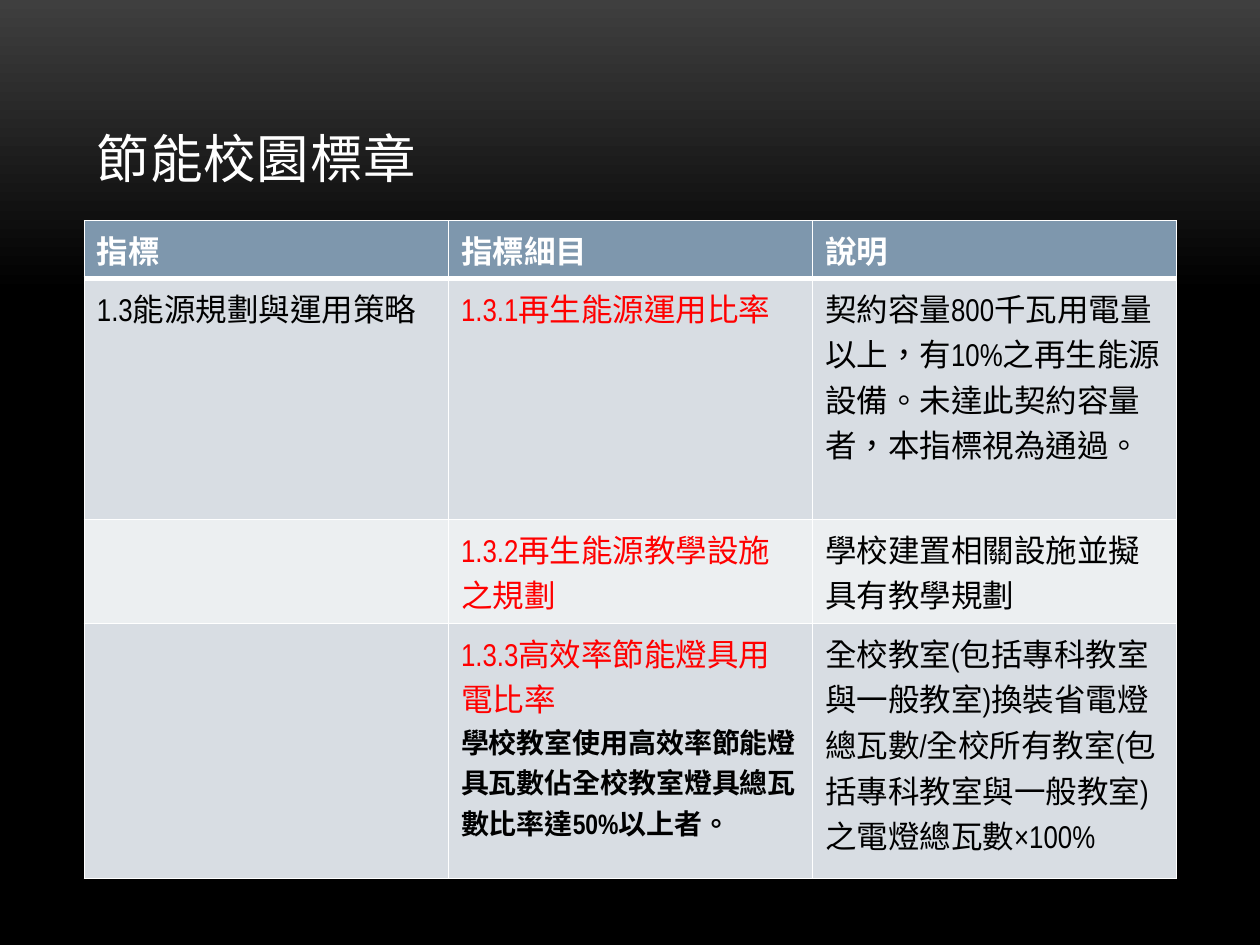
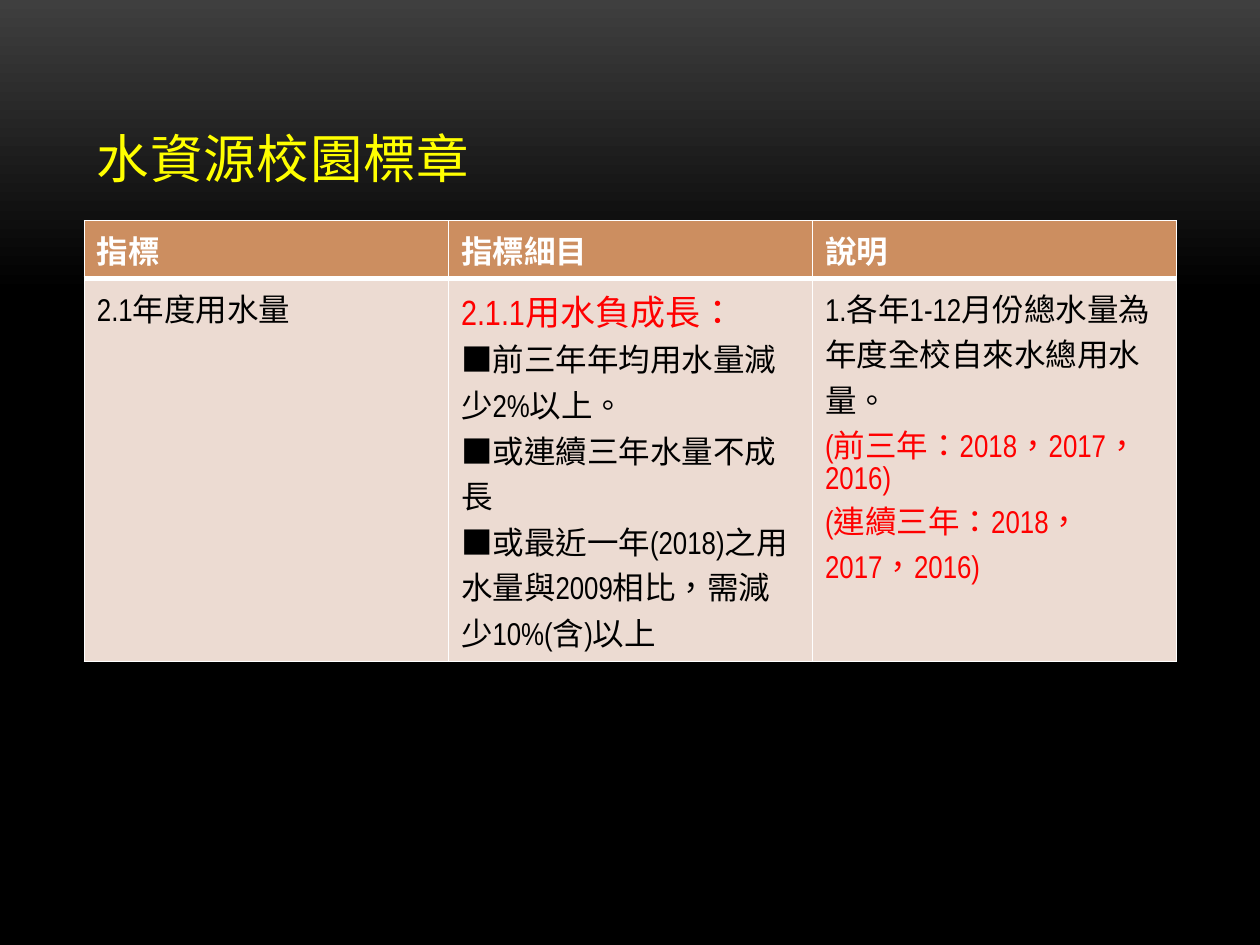
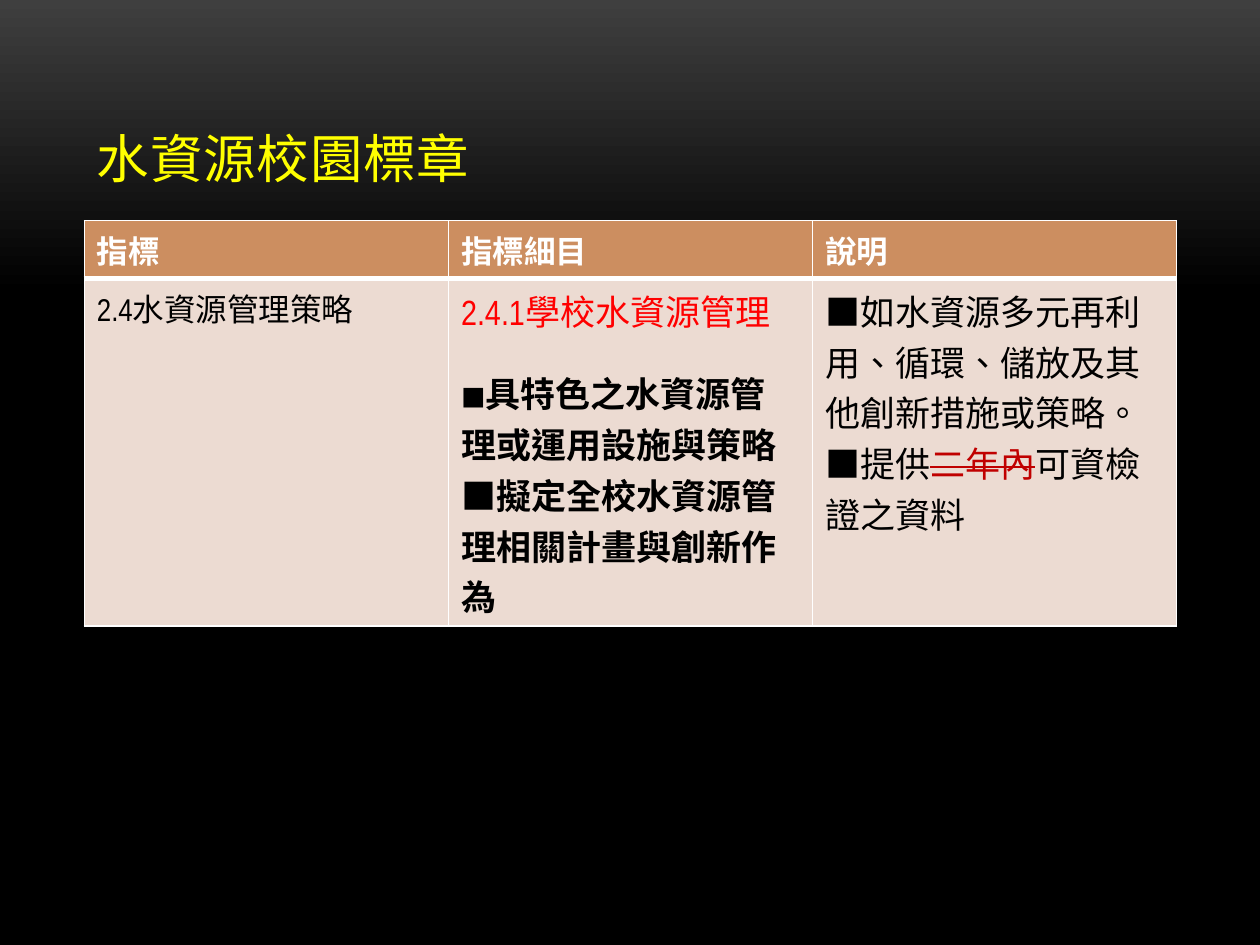
from dataclasses import dataclass

from lxml.etree import SubElement
from pptx import Presentation
from pptx.dml.color import RGBColor
from pptx.enum.lang import MSO_LANGUAGE_ID as Lang
from pptx.enum.text import MSO_ANCHOR as Anchor
from pptx.oxml.ns import qn
from pptx.util import Cm, Pt

WHITE = RGBColor(0xFF, 0xFF, 0xFF)
BLACK = RGBColor(0x00, 0x00, 0x00)
GRAY = RGBColor(0x3F, 0x3F, 0x3F)
RED = RGBColor(0xFF, 0x00, 0x00)
DARK_RED = RGBColor(0xC0, 0x00, 0x00)
YELLOW = RGBColor(0xFF, 0xFF, 0x00)
BLUE = RGBColor(0x7E, 0x97, 0xAD)
BLUE_MID = RGBColor(0xD8, 0xDD, 0xE3)
BLUE_PALE = RGBColor(0xEC, 0xEF, 0xF1)
ORANGE = RGBColor(0xCC, 0x8E, 0x60)
ORANGE_PALE = RGBColor(0xEC, 0xDB, 0xD2)

FONT = "Arial Narrow"
LEFT, WIDTH = Cm(1.7), Cm(22.02)
HEADS = ("指標", "指標細目", "說明")
HEAD_HIGH = 1.16


@dataclass(frozen=True)
class Span:
    text: str
    size: int | None = None
    color: RGBColor | None = None
    strike: bool = False


@dataclass(frozen=True)
class Para:
    spans: str | tuple[Span, ...]
    size: int = 18
    color: RGBColor = BLACK
    bold: bool = False
    before: int = 0


@dataclass(frozen=True)
class Row:
    high: float
    cells: tuple[tuple[Para, ...], ...]


@dataclass(frozen=True)
class Theme:
    title: RGBColor
    head: RGBColor
    bands: tuple[RGBColor, ...]


@dataclass(frozen=True)
class Page:
    title: str
    theme: Theme
    rows: tuple[Row, ...]


ENERGY = Theme(WHITE, BLUE, (BLUE_MID, BLUE_PALE))
WATER = Theme(YELLOW, ORANGE, (ORANGE_PALE,))

PAGES = (
    Page("節能校園標章", ENERGY, (
        Row(4.86, (
            (Para("1.3能源規劃與運用策略"),),
            (Para("1.3.1再生能源運用比率", color=RED),),
            (Para("契約容量800千瓦用電量以上，有10%之再生能源設備。"
                  "未達此契約容量者，本指標視為通過。"),),
        )),
        Row(2.1, (
            (),
            (Para("1.3.2再生能源教學設施之規劃", color=RED),),
            (Para("學校建置相關設施並擬具有教學規劃"),),
        )),
        Row(5.14, (
            (),
            (Para("1.3.3高效率節能燈具用電比率", color=RED),
             Para("學校教室使用高效率節能燈具瓦數佔全校教室燈具總瓦數比率達50%以上者。",
                  size=16, bold=True)),
            (Para("全校教室(包括專科教室與一般教室)換裝省電燈總瓦數/"
                  "全校所有教室(包括專科教室與一般教室)之電燈總瓦數×100%"),),
        )),
    )),
    Page("水資源校園標章", WATER, (
        Row(7.72, (
            (Para("2.1年度用水量"),),
            (Para("2.1.1用水負成長：", size=20, color=RED),
             Para("■前三年年均用水量減少2%以上。"),
             Para("■或連續三年水量不成長"),
             Para("■或最近一年(2018)之用水量與2009相比，需減少10%(含)以上")),
            (Para("1.各年1-12月份總水量為年度全校自來水總用水量。"),
             Para("(前三年：2018，2017，2016)", color=RED),
             Para("(連續三年：2018，2017，2016)", color=RED)),
        )),
    )),
    Page("水資源校園標章", WATER, (
        Row(7.01, (
            (Para("2.4水資源管理策略"),),
            (Para("2.4.1學校水資源管理", size=20, color=RED),
             Para((Span("■", size=14), Span("具特色之水資源管理或運用設施與策略")),
                  size=20, bold=True, before=18),
             Para("■擬定全校水資源管理相關計畫與創新作為", size=20, bold=True)),
            (Para("■如水資源多元再利用、循環、儲放及其他創新措施或策略。", size=20),
             Para((Span("■提供"), Span("二年內", color=DARK_RED, strike=True),
                   Span("可資檢證之資料")), size=20)),
        )),
    )),
)


def write(frame, paras: tuple[Para, ...]) -> None:
    for i, para in enumerate(paras):
        line = frame.paragraphs[0] if i == 0 else frame.add_paragraph()
        if para.before:
            line.space_before = Pt(para.before)
        font = line.font
        font.name, font.size, font.bold = FONT, Pt(para.size), para.bold
        font.color.rgb = para.color
        spans = (Span(para.spans),) if isinstance(para.spans, str) else para.spans
        for span in spans:
            run = line.add_run()
            run.text = span.text
            run.font.language_id = Lang.TRADITIONAL_CHINESE
            if span.size:
                run.font.size = Pt(span.size)
            if span.color is not None:
                run.font.color.rgb = span.color
            if span.strike:
                run.font._element.set("strike", "sngStrike")


def edge(cell, top: float, base: float) -> None:
    """Draw white cell borders; top and base are widths in points."""
    props = cell._tc.get_or_add_tcPr()
    for side, width in (("L", 1), ("R", 1), ("T", top), ("B", base)):
        line = SubElement(props, qn(f"a:ln{side}"), w=str(Pt(width)))
        fill = SubElement(line, qn("a:solidFill"))
        SubElement(fill, qn("a:srgbClr"), val=str(WHITE))


def add_title(slide, text: str, color: RGBColor) -> None:
    frame = slide.shapes.add_textbox(LEFT, Cm(0.76), WIDTH, Cm(3.18)).text_frame
    frame.word_wrap = True
    frame.vertical_anchor = Anchor.BOTTOM
    write(frame, (Para(text, size=30, color=color),))
    frame.paragraphs[0].runs[0].font._element.set("spc", "50")


def add_grid(slide, page: Page) -> None:
    head = Row(HEAD_HIGH, tuple((Para(t, color=WHITE, bold=True),) for t in HEADS))
    rows = (head, *page.rows)
    high = Cm(sum(row.high for row in rows))
    table = slide.shapes.add_table(
        len(rows), len(HEADS), LEFT, Cm(4.45), WIDTH, high).table
    table.horz_banding = False
    bands = page.theme.bands
    for r, row in enumerate(rows):
        table.rows[r].height = Cm(row.high)
        shade = bands[(r - 1) % len(bands)] if r else page.theme.head
        for c, paras in enumerate(row.cells):
            cell = table.cell(r, c)
            edge(cell, 3 if r == 1 else 1, 1 if r else 3)
            cell.fill.solid()
            cell.fill.fore_color.rgb = shade
            write(cell.text_frame, paras)


def set_back(master) -> None:
    """Fade from gray at the top to black a third of the way down."""
    fill = master.background.fill
    fill.gradient()
    fill.gradient_angle = 270
    for stop, color, place in zip(fill.gradient_stops, (GRAY, BLACK), (0, 0.31)):
        stop.color.rgb = color
        stop.position = place


def main() -> None:
    deck = Presentation()
    deck.slide_width, deck.slide_height = Cm(25.4), Cm(19.05)
    set_back(deck.slide_master)
    for page in PAGES:
        slide = deck.slides.add_slide(deck.slide_layouts[6])
        add_title(slide, page.title, page.theme.title)
        add_grid(slide, page)
    deck.save("out.pptx")


if __name__ == "__main__":
    main()
